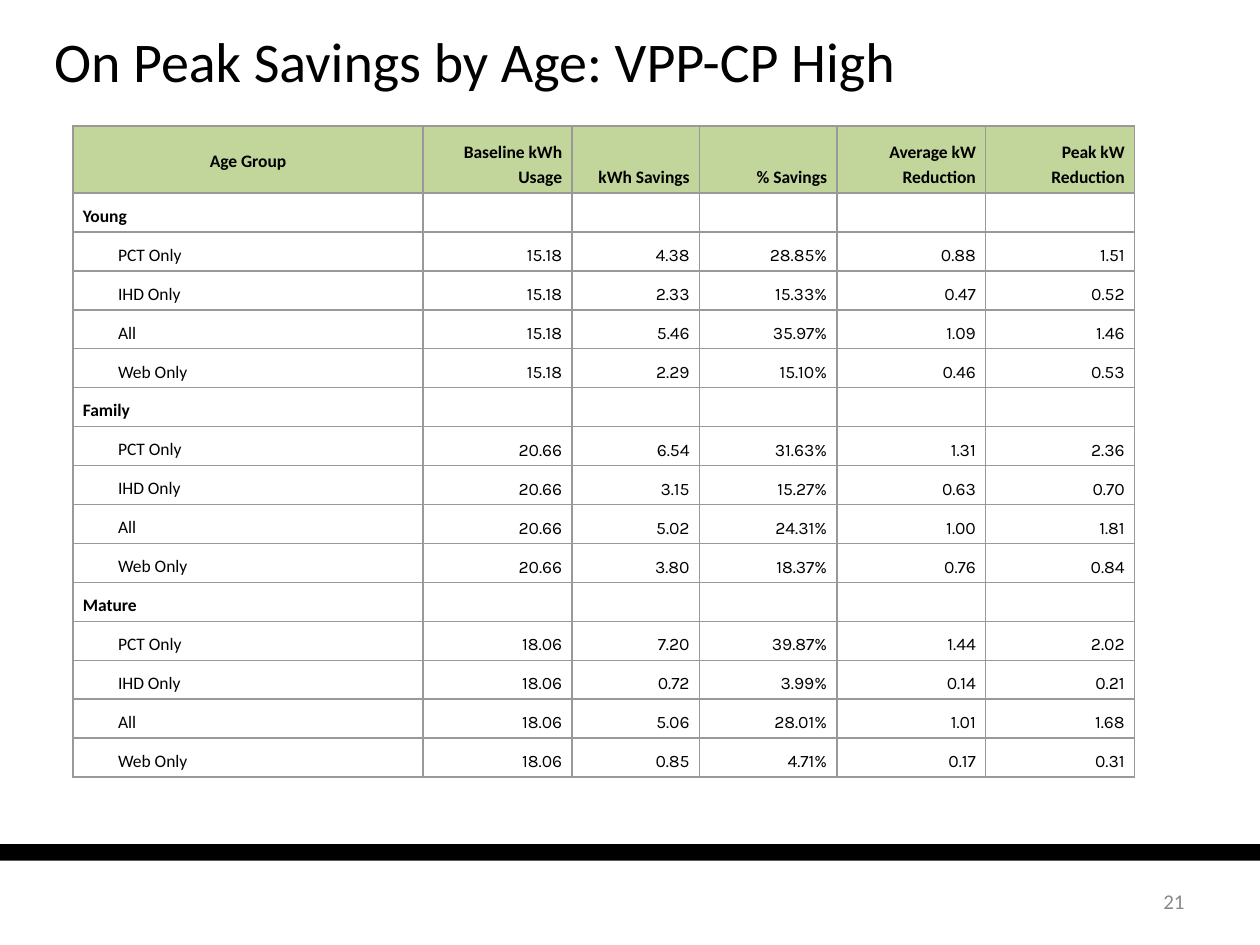
"""Build the slide with the table of on-peak savings by age group."""
from dataclasses import dataclass

from lxml import etree
from pptx import Presentation
from pptx.dml.color import RGBColor
from pptx.enum.shapes import MSO_SHAPE
from pptx.enum.text import MSO_ANCHOR, PP_ALIGN
from pptx.oxml.ns import qn
from pptx.util import Cm, Pt

LEFT, CENTER, RIGHT = PP_ALIGN.LEFT, PP_ALIGN.CENTER, PP_ALIGN.RIGHT
MIDDLE, BOTTOM = MSO_ANCHOR.MIDDLE, MSO_ANCHOR.BOTTOM
RECTANGLE = MSO_SHAPE.RECTANGLE


@dataclass(frozen=True)
class Theme:
    text_font: str = "Calibri"
    number_font: str = "Karla"
    ink: str = "000000"
    muted: str = "898989"
    header: str = "C2D69B"
    border: str = "999999"
    title_size: int = 32
    table_size: int = 10
    number_size: int = 12
    border_width: int = 1


THEME = Theme()
HEADINGS = ["Age Group", "Baseline kWh Usage", "kWh Savings", "% Savings",
            "Average kW Reduction", "Peak kW Reduction"]
DEVICES = ["PCT Only", "IHD Only", "All", "Web Only"]
GROUPS = [
    ("Young", "15.18", [("4.38", "28.85%", "0.88", "1.51"),
                        ("2.33", "15.33%", "0.47", "0.52"),
                        ("5.46", "35.97%", "1.09", "1.46"),
                        ("2.29", "15.10%", "0.46", "0.53")]),
    ("Family", "20.66", [("6.54", "31.63%", "1.31", "2.36"),
                         ("3.15", "15.27%", "0.63", "0.70"),
                         ("5.02", "24.31%", "1.00", "1.81"),
                         ("3.80", "18.37%", "0.76", "0.84")]),
    ("Mature", "18.06", [("7.20", "39.87%", "1.44", "2.02"),
                         ("0.72", "3.99%", "0.14", "0.21"),
                         ("5.06", "28.01%", "1.01", "1.68"),
                         ("0.85", "4.71%", "0.17", "0.31")]),
]
COLUMN_WIDTHS = [7.06, 3, 2.57, 2.77, 3, 3]
TABLE_HEIGHT, HEADER_HEIGHT = 13.13, 1.35


def write(para, text, size, color=THEME.ink, font=THEME.text_font, bold=False, align=LEFT):
    para.alignment = align
    span = para.add_run()
    span.text = text
    span.font.name = font
    span.font.size = Pt(size)
    span.font.bold = bold
    span.font.color.rgb = RGBColor.from_string(color)


def add_borders(cell):
    properties = cell._tc.get_or_add_tcPr()
    for side in ("a:lnL", "a:lnR", "a:lnT", "a:lnB"):
        line = etree.SubElement(properties, qn(side), w=str(Pt(THEME.border_width)))
        fill = etree.SubElement(line, qn("a:solidFill"))
        etree.SubElement(fill, qn("a:srgbClr"), val=THEME.border)


deck = Presentation()
deck.slide_width, deck.slide_height = Cm(25.4), Cm(19.05)
page = deck.slides.add_slide(deck.slide_layouts[6])

footer_bar = page.shapes.add_shape(RECTANGLE, Cm(-0.08), Cm(17.02), Cm(25.5), Cm(0.33))
footer_bar.shadow.inherit = False
footer_bar.fill.solid()
footer_bar.fill.fore_color.rgb = RGBColor.from_string(THEME.ink)
footer_bar.line.fill.background()

number_box = page.shapes.add_textbox(Cm(18.21), Cm(17.65), Cm(5.92), Cm(1.02)).text_frame
number_box.word_wrap = True
number_box.vertical_anchor = MIDDLE
write(number_box.paragraphs[0], "21", THEME.number_size, THEME.muted, align=RIGHT)

title_box = page.shapes.add_textbox(Cm(1.09), Cm(0.43), Cm(20.93), Cm(1.57)).text_frame
title_box.word_wrap = True
title_box.vertical_anchor = MIDDLE
title_box.margin_left = title_box.margin_right = 0
title_box.margin_top = title_box.margin_bottom = 0
write(title_box.paragraphs[0], "On Peak Savings by Age: VPP-CP High", THEME.title_size)

rows = [HEADINGS]
for group, baseline, savings in GROUPS:
    rows.append([group] + [""] * (len(HEADINGS) - 1))
    rows += [[device, baseline, *values] for device, values in zip(DEVICES, savings)]

table = page.shapes.add_table(len(rows), len(HEADINGS), Cm(1.47), Cm(2.54),
                              Cm(sum(COLUMN_WIDTHS)), Cm(TABLE_HEIGHT)).table
table.horz_banding = False
for column, width in zip(table.columns, COLUMN_WIDTHS):
    column.width = Cm(width)
for row in table.rows:
    row.height = Cm((TABLE_HEIGHT - HEADER_HEIGHT) / (len(rows) - 1))
table.rows[0].height = Cm(HEADER_HEIGHT)

for r, values in enumerate(rows):
    is_header = r == 0
    is_device = values[0] in DEVICES
    for c, value in enumerate(values):
        cell = table.cell(r, c)
        cell.margin_left = cell.margin_right = Cm(0.2)
        cell.margin_top = cell.margin_bottom = Cm(0.1)
        cell.vertical_anchor = MIDDLE if is_header and c == 0 else BOTTOM
        add_borders(cell)
        if is_header:
            cell.fill.solid()
            cell.fill.fore_color.rgb = RGBColor.from_string(THEME.header)
        else:
            cell.fill.background()
        para = cell.text_frame.paragraphs[0]
        para.line_spacing = 1.15
        if not value:
            para.font.size = Pt(THEME.table_size)
            continue
        if is_header and c == 0:
            para.space_after = Pt(2)
        if is_device and c == 0:
            para._p.get_or_add_pPr().set("indent", str(Cm(0.71)))
        first_align = CENTER if is_header else LEFT
        write(para, value, THEME.table_size,
              font=THEME.number_font if is_device and c else THEME.text_font,
              bold=not is_device, align=RIGHT if c else first_align)

deck.save("out.pptx")
